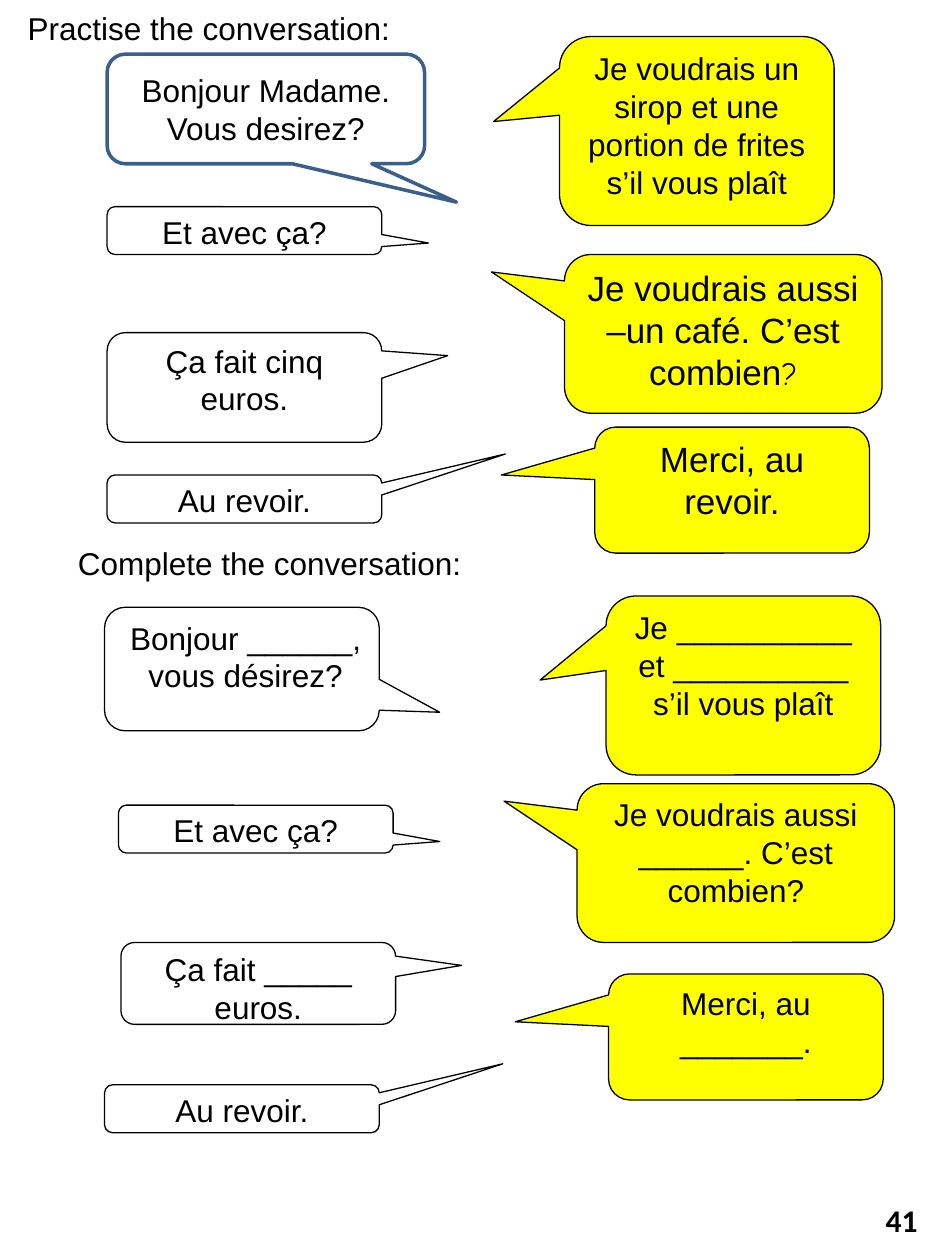
from pptx import Presentation
from pptx.dml.color import RGBColor
from pptx.enum import shapes, text
from pptx.util import Inches, Pt

COLORS = {"ink": "000000", "customer": "FFFF00", "paper": "FFFFFF", "frame": "3A5F8C"}
SMALL_INSETS = (0.07, 0.03)
WIDE_INSETS = (0.1, 0.05)

# left, top, width, height, tail x, tail y, words, size
WAITER_BUBBLES = [
    (0.85, 1.64, 2.18, 0.38, 0.67, 0.26, "Et avec ça?", 18),
    (0.85, 2.64, 2.18, 0.87, 0.74, -0.29, "Ça fait cinq euros.", 18),
    (0.85, 3.77, 2.18, 0.38, 0.95, -0.94, "Au revoir.", 18),
    (0.83, 4.82, 2.18, 0.98, 0.72, 0.35, "", 18),
    (0.94, 6.39, 2.18, 0.38, 0.67, 0.26, "Et avec ça?", 18),
    (0.96, 7.48, 2.18, 0.65, 0.74, -0.22, "Ça fait _____ euros.", 18),
    (0.83, 8.61, 2.18, 0.38, 0.95, -0.94, "Au revoir.", 18),
]
CUSTOMER_BUBBLES = [
    (4.44, 0.29, 2.18, 1.5, -0.74, -0.05,
     "Je voudrais un sirop et une portion de frites s’il vous plaît", 18),
    (4.48, 2.02, 2.52, 1.26, -0.73, -0.39,
     "Je voudrais aussi –un café. C’est combien", 20),
    (4.72, 3.39, 2.18, 1, -0.84, -0.12, "Merci, au revoir.", 20),
    (4.81, 4.73, 2.18, 1.42, -0.74, -0.03,
     "Je __________ et __________ s’il vous plaît", 18),
    (4.58, 6.22, 2.52, 1.26, -0.73, -0.39,
     "Je voudrais aussi ______. C’est combien?", 18),
    (4.83, 7.73, 2.18, 1, -0.84, -0.12, "Merci, au _______.", 18),
]


def color(name):
    """Return a palette colour."""
    return RGBColor.from_string(COLORS[name])


def write(shape, words, size=18, align=text.PP_ALIGN.CENTER,
          anchor=text.MSO_ANCHOR.TOP, insets=WIDE_INSETS):
    """Fill a shape with one formatted paragraph and return it."""
    frame = shape.text_frame
    frame.word_wrap = True
    frame.auto_size = text.MSO_AUTO_SIZE.NONE
    frame.vertical_anchor = anchor
    frame.margin_left = frame.margin_right = Inches(insets[0])
    frame.margin_top = frame.margin_bottom = Inches(insets[1])
    para = frame.paragraphs[0]
    para.text = words
    para.alignment = align
    para.font.name = "Arial"
    para.font.size = Pt(size)
    para.font.color.rgb = color("ink")
    return para


def add_bubble(page, bubble, fill=None, line="ink", weight=0.75, **layout):
    """Add a speech bubble and return its paragraph."""
    left, top, width, height, tail_x, tail_y, words, size = bubble
    shape = page.shapes.add_shape(
        shapes.MSO_SHAPE.ROUNDED_RECTANGULAR_CALLOUT,
        Inches(left), Inches(top), Inches(width), Inches(height))
    shape.shadow.inherit = False
    shape.adjustments[0] = tail_x
    shape.adjustments[1] = tail_y
    if fill:
        shape.fill.solid()
        shape.fill.fore_color.rgb = color(fill)
    else:
        shape.fill.background()
    shape.line.color.rgb = color(line)
    shape.line.width = Pt(weight)
    return write(shape, words, size, **layout)


def add_label(page, left, top, width, height, words, **layout):
    """Add a text box and return its paragraph."""
    box = page.shapes.add_textbox(
        Inches(left), Inches(top), Inches(width), Inches(height))
    return write(box, words, **layout)


def add_title(page, left, top, width, height, words):
    """Move the title placeholder into place and write its words."""
    title = page.shapes.title
    title.left, title.top = Inches(left), Inches(top)
    title.width, title.height = Inches(width), Inches(height)
    write(title, words, align=text.PP_ALIGN.LEFT)


def main():
    """Build the conversation worksheet."""
    deck = Presentation()
    deck.slide_width, deck.slide_height = Inches(7.5), Inches(10)
    page = deck.slides.add_slide(deck.slide_layouts[5])

    add_title(page, 0.12, 0.02, 3.93, 0.4, "Practise the conversation:")
    add_label(page, 0.52, 4.27, 3.55, 0.4, "Complete the conversation:",
              align=text.PP_ALIGN.LEFT)

    for bubble in WAITER_BUBBLES:
        add_bubble(page, bubble, insets=SMALL_INSETS)
    add_label(page, 0.88, 4.88, 2.14, 0.98, "Bonjour ______, vous désirez?",
              insets=SMALL_INSETS)
    for bubble in CUSTOMER_BUBBLES:
        para = add_bubble(page, bubble, "customer", insets=SMALL_INSETS)
        if bubble[6].endswith("combien"):
            span = para.add_run()
            span.text = "?"
            span.font.name = "Comic Neue"
            span.font.size = Pt(18)

    greeting = (0.85, 0.43, 2.52, 0.87, 0.6, 0.85, "Bonjour Madame. Vous desirez?", 18)
    add_bubble(page, greeting, "paper", "frame", 2, anchor=text.MSO_ANCHOR.MIDDLE)

    number = add_label(page, 6.88, 9.45, 0.55, 0.47, "41",
                       anchor=text.MSO_ANCHOR.MIDDLE)
    number.font.name = "Calibri"
    number.font.bold = True

    deck.save("out.pptx")


if __name__ == "__main__":
    main()
